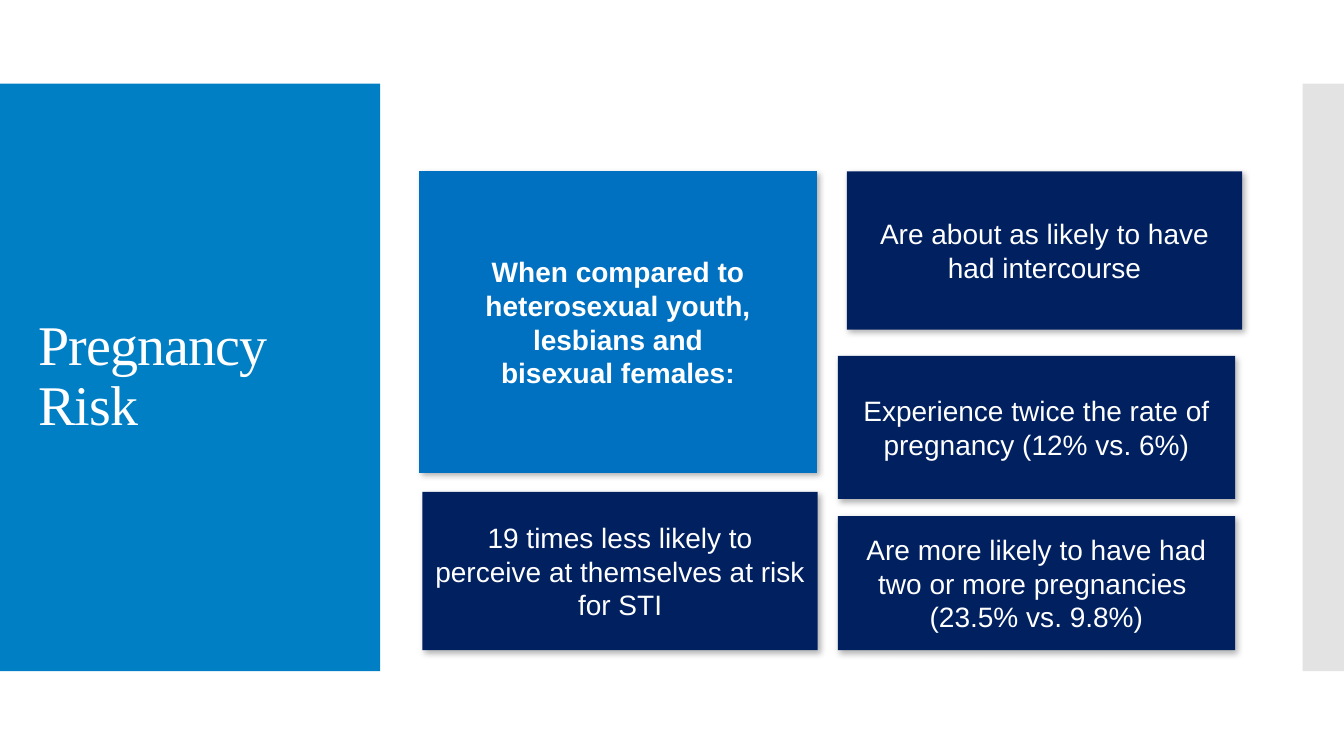
import dataclasses

import lxml.etree
import pptx
import pptx.dml.color
import pptx.enum.shapes
import pptx.enum.text
import pptx.oxml
import pptx.oxml.ns
import pptx.shapes.autoshape
import pptx.slide
import pptx.text.text
import pptx.util

Inches = pptx.util.Inches
Shape = pptx.enum.shapes.MSO_SHAPE

COLOURS = {
    "title panel": "007FC4",
    "edge panel": "C8C8C8",
    "lead": "0070C0",
    "finding": "002060",
    "text": "FFFFFF",
    "shadow": "000000",
}
PANEL_TOP, PANEL_HEIGHT = 0.83, 5.83


@dataclasses.dataclass(frozen=True)
class Card:
    left: float
    top: float
    width: float
    height: float
    lines: tuple[str, ...]
    colour: str = "finding"
    outline: Shape = Shape.RECTANGLE
    bold: bool = False


CARDS = (
    Card(4.16, 1.7, 3.94, 2.99,
         ("When compared to heterosexual youth, lesbians and bisexual females:",),
         "lead", Shape.FLOWCHART_PREDEFINED_PROCESS, True),
    Card(8.4, 1.7, 3.92, 1.57, ("Are about as likely to have had intercourse",)),
    Card(8.31, 3.53, 3.94, 1.42,
         ("Experience twice the rate of pregnancy (12% vs. 6%)",)),
    Card(8.31, 5.12, 3.94, 1.33,
         ("Are more likely to have had two or more pregnancies ", "(23.5% vs. 9.8%)")),
    Card(4.19, 4.88, 3.92, 1.57,
         ("19 times less likely to perceive at themselves at risk for STI",)),
)


def rgb(name: str) -> pptx.dml.color.RGBColor:
    return pptx.dml.color.RGBColor.from_string(COLOURS[name])


def add_block(page: pptx.slide.Slide, outline: Shape, left: float, top: float,
              width: float, height: float, colour: str) -> pptx.shapes.autoshape.Shape:
    """Add a filled shape with no line and no shadow."""
    block = page.shapes.add_shape(
        outline, Inches(left), Inches(top), Inches(width), Inches(height))
    block.fill.solid()
    block.fill.fore_color.rgb = rgb(colour)
    block.line.fill.background()
    block.shadow.inherit = False
    return block


def set_alpha(block: pptx.shapes.autoshape.Shape, percent: int) -> None:
    colour = block.element.spPr.find(".//" + pptx.oxml.ns.qn("a:srgbClr"))
    alpha = lxml.etree.SubElement(colour, pptx.oxml.ns.qn("a:alpha"))
    alpha.set("val", str(percent * 1000))


def add_soft_shadow(block: pptx.shapes.autoshape.Shape) -> None:
    effects = block.element.spPr.find(pptx.oxml.ns.qn("a:effectLst"))
    effects.append(pptx.oxml.parse_xml(
        f'<a:outerShdw {pptx.oxml.ns.nsdecls("a")} blurRad="{pptx.util.Pt(4.5)}" '
        f'dist="{pptx.util.Pt(2.6)}" dir="{53 * 60000}" algn="tl" rotWithShape="0">'
        f'<a:srgbClr val="{COLOURS["shadow"]}"><a:alpha val="30000"/></a:srgbClr>'
        '</a:outerShdw>'))


def add_run(para: pptx.text.text._Paragraph, text: str, font: str, size: int,
            bold: bool = False) -> pptx.text.text._Run:
    run = para.add_run()
    run.text = text
    run.font.name = font
    run.font.size = pptx.util.Pt(size)
    run.font.bold = bold
    run.font.color.rgb = rgb("text")
    return run


def add_card(page: pptx.slide.Slide, card: Card) -> None:
    box = add_block(page, card.outline, card.left, card.top,
                    card.width, card.height, card.colour)
    add_soft_shadow(box)
    frame = box.text_frame
    frame.word_wrap = True
    frame.vertical_anchor = pptx.enum.text.MSO_ANCHOR.MIDDLE
    para = frame.paragraphs[0]
    para.alignment = pptx.enum.text.PP_ALIGN.CENTER
    for index, line in enumerate(card.lines):
        if index:
            para.add_line_break()
        add_run(para, line, "Arial", 20, card.bold)


def format_title(page: pptx.slide.Slide, text: str) -> None:
    title = page.shapes.title
    title.left, title.top = Inches(0.28), Inches(1.23)
    title.width, title.height = Inches(3.22), Inches(5.03)
    frame = title.text_frame
    frame.word_wrap = True
    frame.auto_size = pptx.enum.text.MSO_AUTO_SIZE.NONE
    frame.vertical_anchor = pptx.enum.text.MSO_ANCHOR.MIDDLE
    para = frame.paragraphs[0]
    para.alignment = pptx.enum.text.PP_ALIGN.LEFT
    para.line_spacing = 0.9
    run = add_run(para, text, "Times New Roman", 40)
    run.font._element.set("spc", "-60")
    # Bring the title in front of its panel.
    title.element.getparent().append(title.element)


def main() -> None:
    deck = pptx.Presentation()
    deck.slide_width, deck.slide_height = Inches(13.33), Inches(7.5)
    page = deck.slides.add_slide(deck.slide_layouts.get_by_name("Title Only"))
    add_block(page, Shape.RECTANGLE, 0, PANEL_TOP, 3.77, PANEL_HEIGHT, "title panel")
    edge = add_block(page, Shape.RECTANGLE, 12.92, PANEL_TOP, 0.41, PANEL_HEIGHT,
                     "edge panel")
    set_alpha(edge, 50)
    format_title(page, "Pregnancy Risk")
    for card in CARDS:
        add_card(page, card)
    deck.save("out.pptx")


if __name__ == "__main__":
    main()
